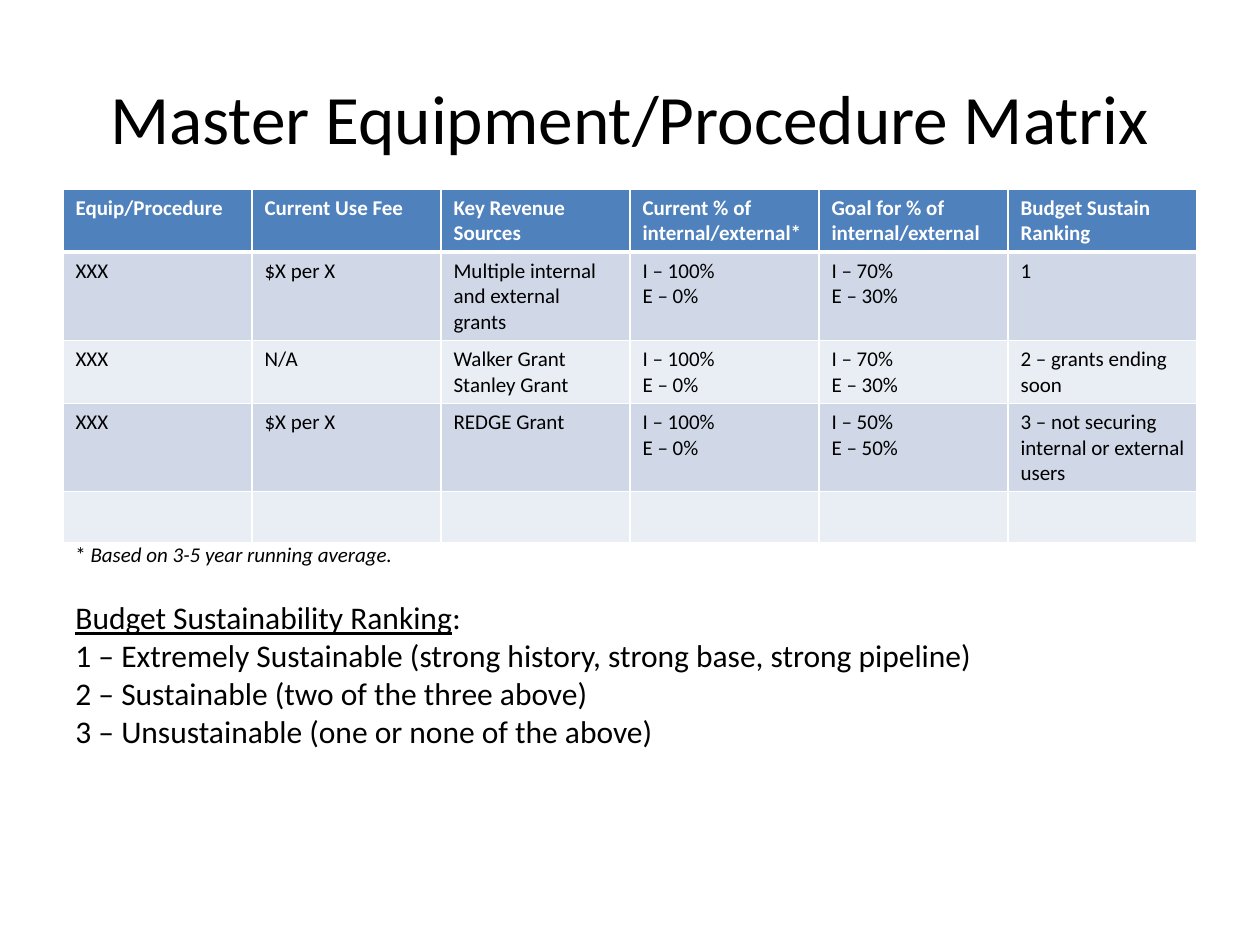
from lxml.etree import SubElement
from pptx import Presentation
from pptx.dml.color import RGBColor as RGB
from pptx.enum.text import MSO_ANCHOR as Anchor, PP_ALIGN as Align
from pptx.oxml.ns import qn
from pptx.util import Inches, Pt

# Content: each text is a list of paragraphs, each paragraph a list of (text, format) runs or a string
TITLE = ["Master Equipment/Procedure Matrix"]
HEADER = ["Equip/Procedure", "Current Use Fee", "Key Revenue Sources",
          "Current % of internal/external*", "Goal for % of internal/external",
          "Budget Sustain\nRanking"]
ROWS = [
    ["XXX", "$X per X", "Multiple internal and external grants",
     "I – 100%\nE – 0%", "I – 70%\nE – 30%", "1"],
    ["XXX", "N/A", "Walker Grant\nStanley Grant",
     "I – 100%\nE – 0%", "I – 70%\nE – 30%", "2 – grants ending soon"],
    ["XXX", "$X per X", "REDGE Grant",
     "I – 100%\nE – 0%", "I – 50%\nE – 50%", "3 – not securing internal or external users"],
    [""] * len(HEADER),
]
RANKING = [
    [("Budget Sustainability Ranking", {"underline": True}), (":", {})],
    "1 – Extremely Sustainable (strong history, strong base, strong pipeline)",
    "2 – Sustainable (two of the three above)",
    "3 – Unsustainable (one or none of the above)",
]
FOOTNOTE = [[("* ", {}), ("Based on 3-5 year running average.", {"italic": True})]]

THEME = {
    "font": "Calibri", "text": "000000", "light": "FFFFFF",
    "header": "4F81BD", "bands": ("D0D8E8", "E9EDF4"),
    "title": 39.6, "body": 18, "small": 12,
    "rule": 1, "header_rule": 3,
}

# Layout in inches
WIDTH, HEIGHT, MARGIN = 10, 7.5, 0.5
CONTENT = WIDTH - 2 * MARGIN
TABLE_TOP = HEIGHT / 5
ROW_HEIGHTS = [0.5, 0.7, 0.5, 0.7, 0.41]


def write(tf, paragraphs, size, color=THEME["text"], bold=False, align=Align.LEFT):
    for i, runs in enumerate(paragraphs):
        p = tf.paragraphs[0] if i == 0 else tf.add_paragraph()
        p.alignment = align
        for text, style in [(runs, {})] if isinstance(runs, str) else runs:
            r = p.add_run()
            r.text = text
            r.font.name, r.font.size, r.font.bold = THEME["font"], Pt(size), bold
            r.font.color.rgb = RGB.from_string(color)
            for name, value in style.items():
                setattr(r.font, name, value)


def add_text(slide, box, paragraphs, size, wrap=True, anchor=Anchor.TOP, **style):
    tf = slide.shapes.add_textbox(*map(Inches, box)).text_frame
    tf.word_wrap, tf.vertical_anchor = wrap, anchor
    write(tf, paragraphs, size, **style)


def set_borders(cell, **widths):
    for side in "LRTB":
        ln = SubElement(cell._tc.get_or_add_tcPr(), qn(f"a:ln{side}"),
                        w=str(Pt(widths.get(side, THEME["rule"]))))
        SubElement(SubElement(ln, qn("a:solidFill")), qn("a:srgbClr"), val=THEME["light"])


def add_matrix(slide):
    cells = [HEADER] + ROWS
    table = slide.shapes.add_table(
        len(cells), len(HEADER), Inches(MARGIN), Inches(TABLE_TOP),
        Inches(CONTENT), Inches(sum(ROW_HEIGHTS))).table
    for column in table.columns:
        column.width = Inches(CONTENT / len(HEADER))
    for i, row in enumerate(cells):
        table.rows[i].height = Inches(ROW_HEIGHTS[i])
        head = i == 0
        fill = THEME["header"] if head else THEME["bands"][(i - 1) % 2]
        heavy = {0: {"B": THEME["header_rule"]}, 1: {"T": THEME["header_rule"]}}.get(i, {})
        for j, text in enumerate(row):
            cell = table.cell(i, j)
            set_borders(cell, **heavy)
            cell.fill.solid()
            cell.fill.fore_color.rgb = RGB.from_string(fill)
            if text:
                write(cell.text_frame, text.split("\n"), THEME["small"], bold=head,
                      color=THEME["light"] if head else THEME["text"])


def main():
    prs = Presentation()
    prs.slide_width, prs.slide_height = Inches(WIDTH), Inches(HEIGHT)
    slide = prs.slides.add_slide(prs.slide_layouts[6])

    # Title and matrix
    add_text(slide, (MARGIN, 0.3, CONTENT, 1.25), TITLE, THEME["title"],
             anchor=Anchor.MIDDLE, align=Align.CENTER)
    add_matrix(slide)

    # Ranking key and footnote
    add_text(slide, (MARGIN, 4.7, 8.32, 1.62), RANKING, THEME["body"])
    add_text(slide, (MARGIN, 4.25, 2.74, 0.3), FOOTNOTE, THEME["small"], wrap=False)

    prs.save("out.pptx")


if __name__ == "__main__":
    main()
